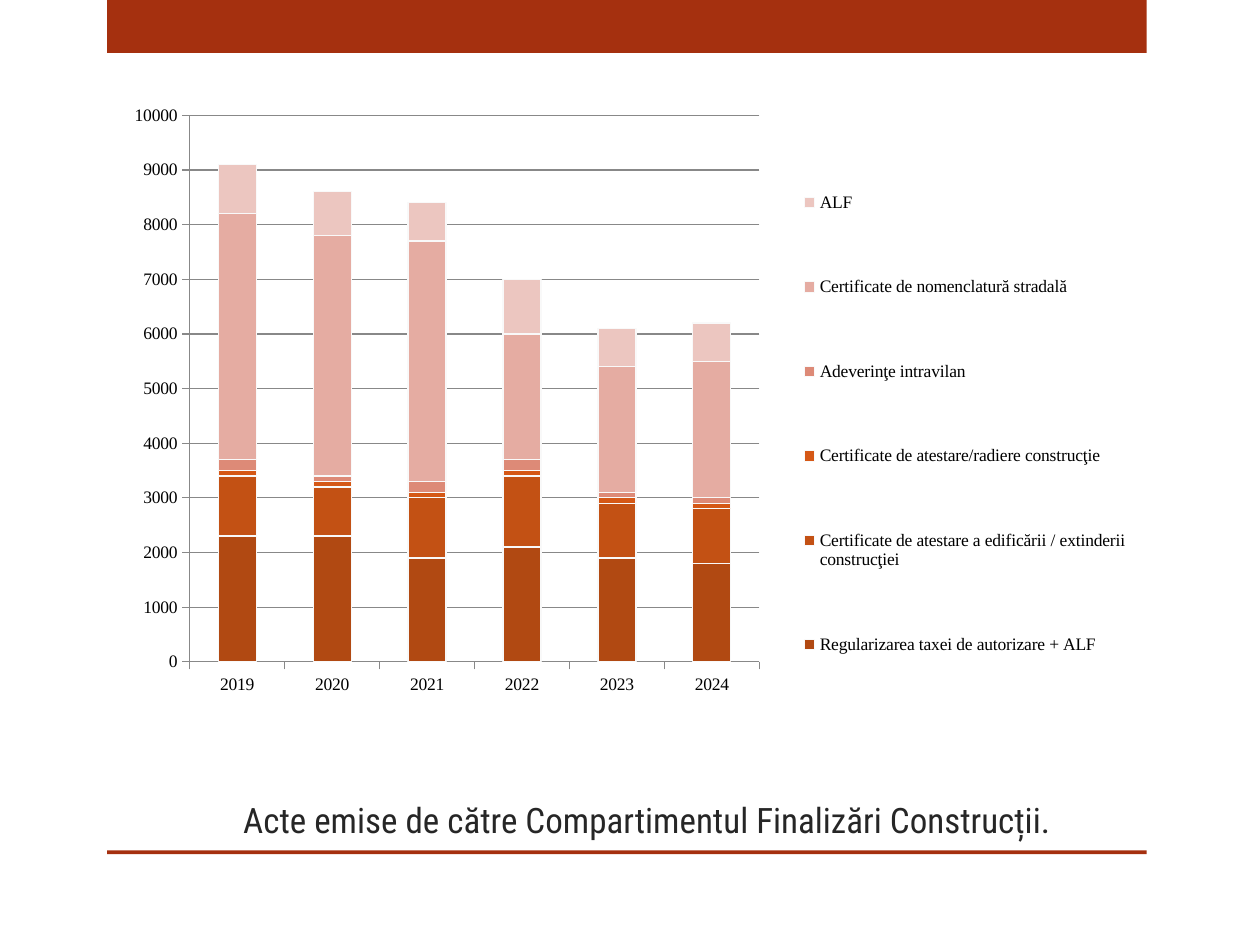
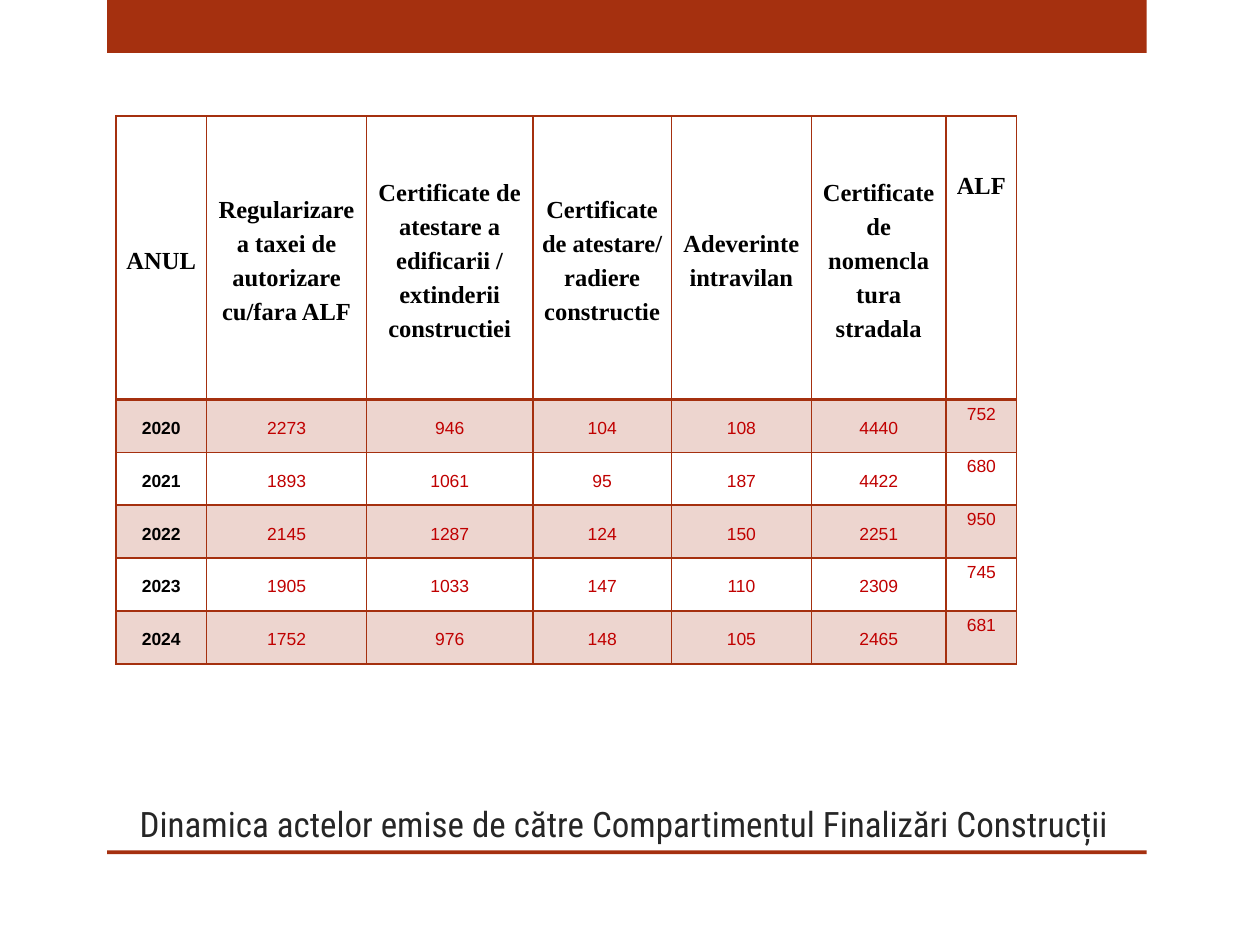
from lxml import etree
from pptx import Presentation
from pptx.chart.data import CategoryChartData
from pptx.dml.color import RGBColor
from pptx.enum.chart import XL_CHART_TYPE, XL_LEGEND_POSITION, XL_TICK_MARK
from pptx.enum.shapes import MSO_SHAPE
from pptx.enum.text import MSO_ANCHOR, PP_ALIGN
from pptx.oxml import parse_xml
from pptx.oxml.ns import nsdecls, qn
from pptx.util import Inches, Pt

RUST, INK, BLACK, RED = "A5300F", "262626", "000000", "C00000"
GRID, EDGE = "888888", "F9F9F9"
SANS, SERIF, TITLE_FONT = "Arial", "Times New Roman", "Roboto Condensed"
LEFT, WIDTH = 0.83, 8.25

CHART_TITLE = "Acte emise de către Compartimentul Finalizări Construcții."
TABLE_TITLE = "Dinamica actelor emise de către Compartimentul Finalizări Construcții"

YEARS = ["2019", "2020", "2021", "2022", "2023", "2024"]
SERIES = [
    ("Regularizarea taxei de autorizare + ALF", "B14912",
     [2300, 2300, 1900, 2100, 1900, 1800]),
    ("Certificate de atestare a edificării / extinderii construcţiei", "C35114",
     [1100, 900, 1100, 1300, 1000, 1000]),
    ("Certificate de atestare/radiere construcţie", "D55816",
     [100, 100, 100, 100, 100, 100]),
    ("Adeverinţe intravilan", "DD8A77", [200, 100, 200, 200, 100, 100]),
    ("Certificate de nomenclatură stradală", "E5ACA2",
     [4500, 4400, 4400, 2300, 2300, 2500]),
    ("ALF", "ECC6C0", [900, 800, 700, 1000, 700, 700]),
]
PLOT_BOX = (0.082, 0.031, 0.548, 0.814)
LEGEND_BOX = (0.655, 0.05, 0.345, 0.88)

HEADER = [
    "ANUL",
    "Regularizarea taxei de autorizare cu/fara ALF",
    "Certificate de atestare a edificarii / extinderii constructiei",
    "Certificate de atestare/ radiere constructie",
    "Adeverinte intravilan",
    "Certificate de nomencla tura stradala",
    "ALF",
]
ROWS = [
    (2020, 2273, 946, 104, 108, 4440, 752),
    (2021, 1893, 1061, 95, 187, 4422, 680),
    (2022, 2145, 1287, 124, 150, 2251, 950),
    (2023, 1905, 1033, 147, 110, 2309, 745),
    (2024, 1752, 976, 148, 105, 2465, 681),
]
COL_WIDTHS = [0.72, 1.27, 1.32, 1.1, 1.11, 1.07, 0.56]
HEADER_HEIGHT, ROW_HEIGHT = 2.25, 0.42


def rgb(color):
    return RGBColor.from_string(color)


def style_font(font, name, size, color, bold=False):
    font.name, font.size, font.bold = name, Pt(size), bold
    font.color.rgb = rgb(color)


def style_line(line, color, width=0.75):
    line.color.rgb = rgb(color)
    line.width = Pt(width)


def add_band(s, top, height):
    sp = s.shapes.add_shape(MSO_SHAPE.RECTANGLE, Inches(0.85), Inches(top),
                            Inches(WIDTH), Inches(height))
    sp.shadow.inherit = False
    sp.fill.solid()
    sp.fill.fore_color.rgb = rgb(RUST)
    sp.line.fill.background()


def add_slide(prs, title, top, align, indent=0):
    s = prs.slides.add_slide(prs.slide_layouts[6])
    add_band(s, 0, 0.42)
    add_band(s, 6.75, 0.03)
    sp = s.shapes.add_textbox(Inches(LEFT), Inches(top), Inches(WIDTH), Inches(0.5))
    tf = sp.text_frame
    tf.word_wrap = True
    tf.vertical_anchor = MSO_ANCHOR.BOTTOM
    tf.margin_left = Inches(0.1 + indent)
    p = tf.paragraphs[0]
    p.alignment = align
    r = p.add_run()
    r.text = title
    style_font(r.font, TITLE_FONT, 20, INK)
    return s


def manual_layout(box, inner=False):
    layout = parse_xml(f"<c:layout {nsdecls('c')}><c:manualLayout/></c:layout>")
    values = [("layoutTarget", "inner")] if inner else []
    values += [("xMode", "edge"), ("yMode", "edge"), *zip("xywh", box)]
    for tag, value in values:
        etree.SubElement(layout[0], qn(f"c:{tag}")).set("val", str(value))
    return layout


def add_acts_chart(s):
    data = CategoryChartData(number_format="0")
    data.categories = YEARS
    for name, _, values in SERIES:
        data.add_series(name, values)
    chart = s.shapes.add_chart(XL_CHART_TYPE.COLUMN_STACKED, Inches(LEFT), Inches(0.75),
                               Inches(WIDTH), Inches(5.33), data).chart
    chart.has_title = False
    style_font(chart.font, SERIF, 10, BLACK)

    plot = chart.plots[0]
    plot.gap_width, plot.overlap, plot.vary_by_categories = 150, 100, False
    for series, (_, color, _) in zip(plot.series, SERIES):
        series.format.fill.solid()
        series.format.fill.fore_color.rgb = rgb(color)
        style_line(series.format.line, EDGE)

    for axis in (chart.category_axis, chart.value_axis):
        axis.major_tick_mark = XL_TICK_MARK.OUTSIDE
        axis.minor_tick_mark = XL_TICK_MARK.NONE
        style_line(axis.format.line, GRID)
        style_font(axis.tick_labels.font, SERIF, 10, BLACK)
    axis.minimum_scale, axis.maximum_scale, axis.major_unit = 0, 10000, 1000
    axis.has_major_gridlines = True
    style_line(axis.major_gridlines.format.line, GRID)

    chart.has_legend = True
    legend = chart.legend
    legend.position = XL_LEGEND_POSITION.RIGHT
    legend.include_in_layout = False
    style_font(legend.font, SERIF, 10, BLACK)
    area = chart.plots[0]._element.getparent()
    for old in [*area.findall(qn("c:layout")), *legend._element.findall(qn("c:layout"))]:
        old.getparent().remove(old)
    area.insert(0, manual_layout(PLOT_BOX, inner=True))
    legend._element.find(qn("c:legendPos")).addnext(manual_layout(LEGEND_BOX))


def set_borders(cell, widths):
    tcPr = cell._tc.get_or_add_tcPr()
    for side, width in zip("LRTB", widths):
        tcPr.append(parse_xml(
            f'<a:ln{side} {nsdecls("a")} w="{Pt(width)}"><a:solidFill>'
            f'<a:srgbClr val="{RUST}"/></a:solidFill></a:ln{side}>'))


def tint(cell, percent):
    cell.fill.solid()
    cell.fill.fore_color.rgb = rgb(RUST)
    color = cell._tc.tcPr.find(qn("a:solidFill"))[0]
    etree.SubElement(color, qn("a:alpha")).set("val", str(percent * 1000))


def fill_cell(cell, text, row, col):
    last = col == len(HEADER) - 1
    cell.margin_left = cell.margin_right = Inches(0.07)
    cell.margin_top = Inches(0.4 if last and row == 0 else 0)
    cell.margin_bottom = 0
    cell.vertical_anchor = MSO_ANCHOR.TOP if last else MSO_ANCHOR.MIDDLE
    set_borders(cell, (1, 1, 2 if row == 1 else 1, 2 if row == 0 else 1))
    if row % 2:
        tint(cell, 20)
    else:
        cell.fill.background()
    p = cell.text_frame.paragraphs[0]
    p.alignment, p.line_spacing, p.space_after = PP_ALIGN.CENTER, 1.25, Pt(9)
    r = p.add_run()
    r.text = str(text)
    if row == 0:
        style_font(r.font, SERIF, 14, BLACK, True)
    else:
        style_font(r.font, SANS, 10, RED if col else BLACK, col == 0)


def add_acts_table(s):
    heights = [HEADER_HEIGHT] + [ROW_HEIGHT] * len(ROWS)
    table = s.shapes.add_table(len(heights), len(HEADER), Inches(0.92), Inches(0.92),
                               Inches(sum(COL_WIDTHS)), Inches(sum(heights))).table
    table.first_row = table.horz_banding = False
    for column, width in zip(table.columns, COL_WIDTHS):
        column.width = Inches(width)
    for row, (height, values) in enumerate(zip(heights, [HEADER, *ROWS])):
        table.rows[row].height = Inches(height)
        for col, text in enumerate(values):
            fill_cell(table.cell(row, col), text, row, col)


def main():
    prs = Presentation()
    prs.slide_width, prs.slide_height = Inches(10), Inches(7.5)
    add_acts_chart(add_slide(prs, CHART_TITLE, 6.22, PP_ALIGN.LEFT, indent=1))
    add_acts_table(add_slide(prs, TABLE_TITLE, 6.25, PP_ALIGN.CENTER))
    prs.save("out.pptx")


if __name__ == "__main__":
    main()
